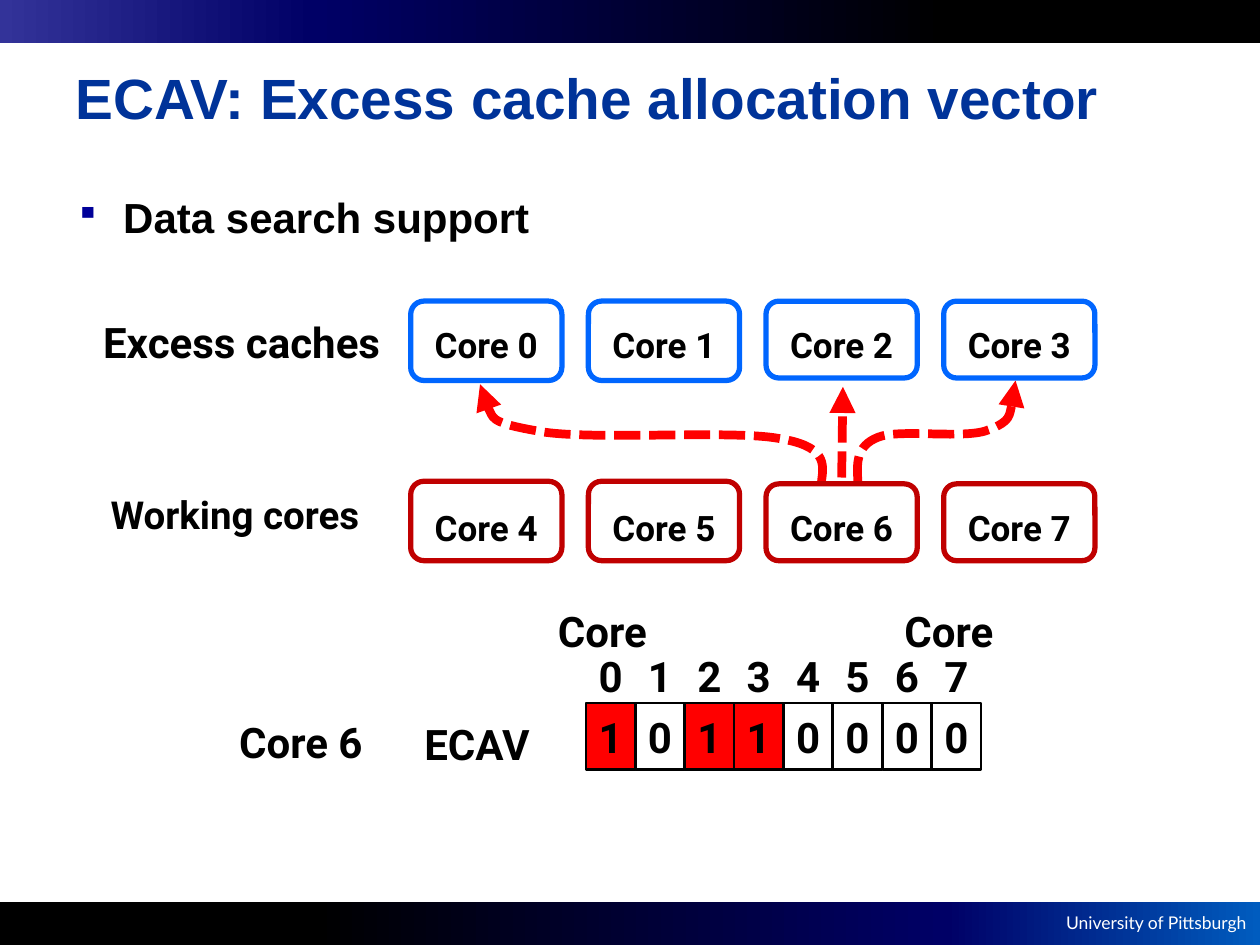
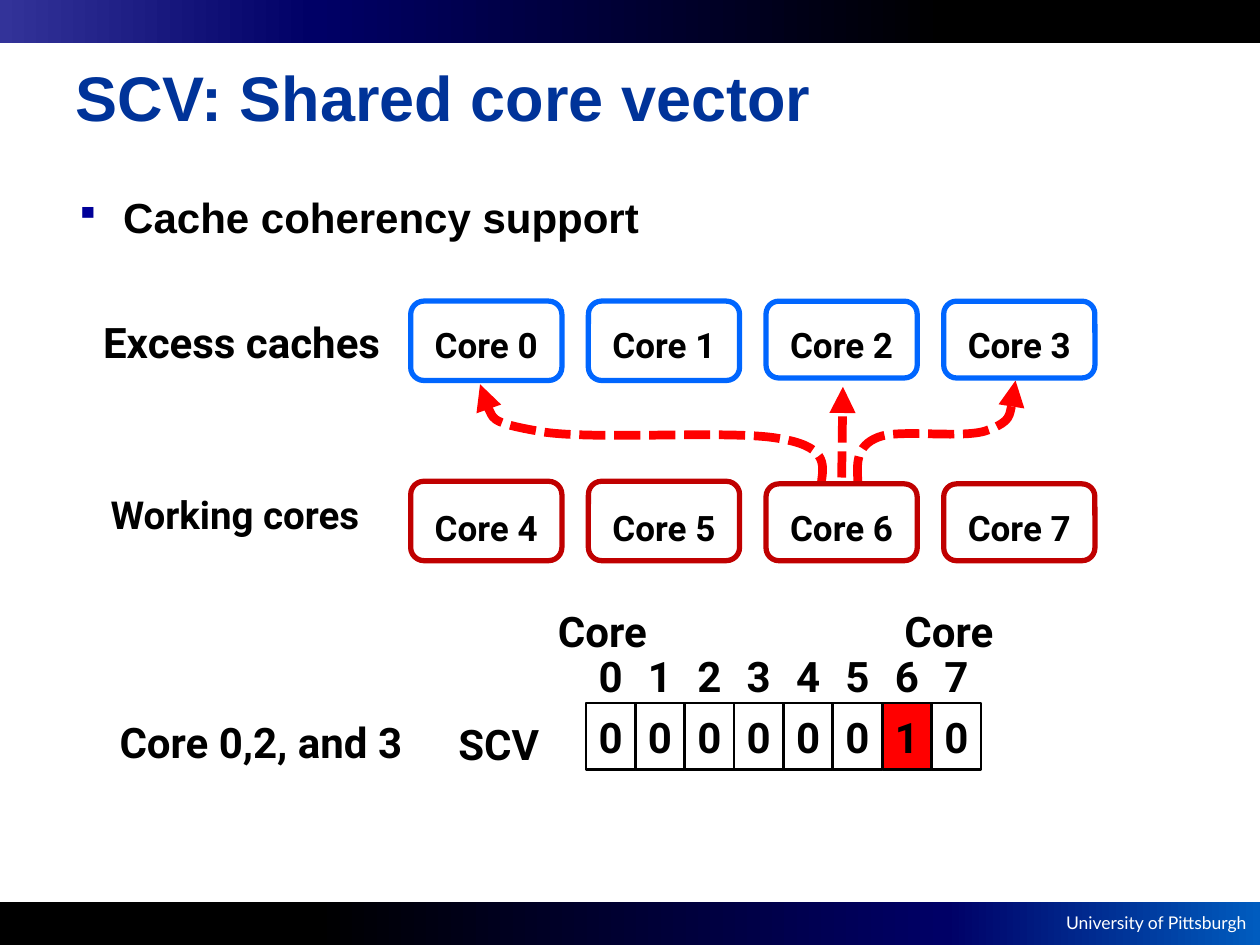
from dataclasses import dataclass

from lxml import etree
from pptx import Presentation
from pptx.dml.color import RGBColor
from pptx.enum.dml import MSO_LINE
from pptx.enum.shapes import MSO_CONNECTOR, MSO_SHAPE
from pptx.enum.text import MSO_ANCHOR, PP_ALIGN
from pptx.oxml.ns import qn
from pptx.util import Inches, Pt

RECT, ROUND = MSO_SHAPE.RECTANGLE, MSO_SHAPE.ROUNDED_RECTANGLE
STRAIGHT, DASH = MSO_CONNECTOR.STRAIGHT, MSO_LINE.SQUARE_DOT
LEFT, CENTER, RIGHT = PP_ALIGN.LEFT, PP_ALIGN.CENTER, PP_ALIGN.RIGHT
TOP, MIDDLE = MSO_ANCHOR.TOP, MSO_ANCHOR.MIDDLE

# The grid: 100 columns by 75 rows of square cells
CELL = Inches(0.1)
COLS, ROWS = 100, 75

BLACK, WHITE, RED = "000000", "FFFFFF", "FF0000"
BLUE, CRIMSON, NAVY, MARK = "0066FF", "C00000", "003399", "000099"
HEAD_FADE = ((0, "333399"), (25, "000066"), (75, BLACK), (100, BLACK))
FOOT_FADE = ((0, BLACK), (25, BLACK), (75, "000066"), (100, "005CBF"))
BAND = 3.4

# Core boxes: four columns in two rows
CORE_X, CORE_STEP, CORE_W = 32.6, 14.1, 12
CORE_H = (6.3, 6.3, 6.1, 6.1)

# Vector cells
BIT_X, BIT_W, BIT_H = 46.5, 3.92, 5.3
INDEX_Y, BIT_Y = 51, 55.8

# Curved arrows from core 6: a start, then three points for each bend
CURVES = (
    ((65.2, 38.2), (65.4, 36.8), (65.6, 35.4), (61.8, 34.8),
     (58, 34.1), (46.5, 35), (42.6, 34.2),
     (38.6, 33.5), (38.4, 32), (38.1, 30.5)),
    ((68.1, 38.3), (68, 36.8), (67.9, 35.4), (69.7, 34.7),
     (71.4, 34), (76.7, 34.9), (78.5, 34.1),
     (80.3, 33.4), (80.5, 31.8), (80.6, 30.2)),
)


@dataclass
class Box:
    x: float
    y: float
    w: float
    h: float

    def emu(self) -> list[int]:
        return [grid(v) for v in (self.x, self.y, self.w, self.h)]


@dataclass
class Style:
    size: float = 24
    font: str = "Roboto"
    color: str = BLACK
    bold: bool = True
    align: PP_ALIGN = LEFT
    anchor: MSO_ANCHOR = TOP


@dataclass
class Label:
    text: str
    box: Box
    size: float = 24


@dataclass
class Topic:
    title: str
    size: float
    point: str
    owner: Label
    name: Label
    bits: str


LABELS = (
    Label("Excess caches", Box(7.2, 24.6, 24.5, 5)),
    Label("Working cores", Box(7.8, 38.5, 24.8, 4.7), 22),
    Label("Core", Box(43.3, 47.6, 10.2, 5)),
    Label("Core", Box(70.8, 47.6, 10.2, 5)),
)
TOPICS = (
    Topic("ECAV: Excess cache allocation vector", 32.4, "Data search support",
          Label("Core 6", Box(18, 56.4, 13.3, 5)),
          Label("ECAV", Box(32.7, 56.5, 12.7, 5)), "10110000"),
    Topic("SCV: Shared core vector", 36, "Cache coherency support",
          Label("Core 0,2, and 3", Box(8.5, 56.4, 27.5, 5)),
          Label("SCV", Box(35.4, 56.5, 12.7, 5)), "00000010"),
)
BIT = Style(align=CENTER, anchor=MIDDLE)
CORE = Style(20, align=CENTER)
FOOT = Style(10, "Lato", WHITE, False, RIGHT)


def grid(cells: float) -> int:
    return round(cells * CELL)


def rgb(code: str) -> RGBColor:
    return RGBColor.from_string(code)


def write(shape, text: str, style: Style, wrap: bool = True):
    frame = shape.text_frame
    frame.word_wrap = wrap
    frame.vertical_anchor = style.anchor
    para = frame.paragraphs[0]
    para.text, para.alignment = text, style.align
    font = para.font
    font.size, font.name, font.bold = Pt(style.size), style.font, style.bold
    font.color.rgb = rgb(style.color)
    return frame


def add_text(slide, box: Box, text: str, style: Style, wrap: bool = True):
    return write(slide.shapes.add_textbox(*box.emu()), text, style, wrap)


def add_box(slide, kind: MSO_SHAPE, box: Box, fill: str = "",
            line: str = "", width: float = 0):
    shape = slide.shapes.add_shape(kind, *box.emu())
    shape.shadow.inherit = False
    if fill:
        shape.fill.solid()
        shape.fill.fore_color.rgb = rgb(fill)
    else:
        shape.fill.background()
    if line:
        shape.line.color.rgb = rgb(line)
        shape.line.width = Pt(width)
    else:
        shape.line.fill.background()
    return shape


def add_band(slide, y: float, stops: tuple) -> None:
    band = add_box(slide, RECT, Box(0, y, COLS, BAND))
    band.fill.gradient()
    band.fill.gradient_angle = 0
    fade = band._element.spPr.find(qn("a:gradFill")).find(qn("a:gsLst"))
    for stop in list(fade):
        fade.remove(stop)
    for pos, code in stops:
        stop = etree.SubElement(fade, qn("a:gs"), pos=str(pos * 1000))
        etree.SubElement(stop, qn("a:srgbClr"), val=code)


def add_point(slide, text: str) -> None:
    frame = add_text(slide, Box(5, 14.7, 90, 54), text, Style(font="Arial"))
    props = frame.paragraphs[0]._p.get_or_add_pPr()
    indent = grid(3.8)
    props.set("marL", str(indent))
    props.set("indent", str(-indent))
    tint = etree.Element(qn("a:buClr"))
    etree.SubElement(tint, qn("a:srgbClr"), val=MARK)
    size = etree.Element(qn("a:buSzPct"), val="80000")
    mark = etree.Element(qn("a:buChar"), char="▪")
    for place, part in enumerate((tint, size, mark)):
        props.insert(place, part)


def dash_arrow(line) -> None:
    line.color.rgb = rgb(RED)
    line.width = Pt(5)
    line.dash_style = DASH
    etree.SubElement(line._get_or_add_ln(), qn("a:tailEnd"), type="triangle")


def add_curve(slide, points: tuple) -> None:
    spots = [(grid(x), grid(y)) for x, y in points]
    pen = slide.shapes.build_freeform(*spots[0])
    pen.add_line_segments(spots[1:], close=False)
    curve = pen.convert_to_shape()
    curve.shadow.inherit = False
    curve.fill.background()
    # Turn each three straight steps into one bend
    steps = list(curve._element.iter(qn("a:lnTo")))
    for i in range(0, len(steps), 3):
        bend = etree.Element(qn("a:cubicBezTo"))
        steps[i].addprevious(bend)
        for step in steps[i:i + 3]:
            bend.append(step[0])
            step.getparent().remove(step)
    dash_arrow(curve.line)


def add_arrows(slide) -> None:
    for points in CURVES:
        add_curve(slide, points)
    ends = [grid(v) for v in (66.8, 37.9, 66.9, 30.7)]
    shaft = slide.shapes.add_connector(STRAIGHT, *ends)
    etree.SubElement(shaft._element.spPr, qn("a:effectLst"))
    dash_arrow(shaft.line)


def add_cores(slide) -> None:
    for i, high in enumerate(CORE_H):
        x = CORE_X + i * CORE_STEP
        # Tops align in the upper row, bottoms in the lower one
        rows = ((i, 23.9, 25.7, BLUE), (i + 4, 44.5 - high, 40.2, CRIMSON))
        for core, y, text_y, color in rows:
            box = add_box(slide, ROUND, Box(x, y, CORE_W, high), "", color, 3)
            frame = write(box, f"Core {core}", CORE)
            # The box's round corners add their own inset of about 0.3 cell
            frame.margin_top = grid(text_y - y - 0.3)
            frame.margin_bottom = 0


def add_vector(slide, bits: str) -> None:
    for i, bit in enumerate(bits):
        x = BIT_X + i * BIT_W
        fill = RED if bit == "1" else ""
        cell = add_box(slide, RECT, Box(x, BIT_Y, BIT_W, BIT_H), fill, BLACK, 1.5)
        index = add_text(slide, Box(x, INDEX_Y, BIT_W, BIT_H), str(i), BIT)
        for frame in (write(cell, bit, BIT), index):
            frame.margin_left = frame.margin_right = 0


def add_frame(slide, topic: Topic) -> None:
    add_band(slide, ROWS - BAND, FOOT_FADE)
    add_text(slide, Box(83.3, 71.9, 16.6, 2.7), "University of Pittsburgh",
             FOOT, wrap=False)
    add_band(slide, 0, HEAD_FADE)
    add_text(slide, Box(5, 1.4, 90, 12.5), topic.title,
             Style(topic.size, "Arial", NAVY, anchor=MIDDLE))
    add_point(slide, topic.point)


def main() -> None:
    deck = Presentation()
    deck.slide_width, deck.slide_height = grid(COLS), grid(ROWS)
    for topic in TOPICS:
        slide = deck.slides.add_slide(deck.slide_layouts[6])
        add_frame(slide, topic)
        add_arrows(slide)
        add_cores(slide)
        add_vector(slide, topic.bits)
        for label in (*LABELS, topic.owner, topic.name):
            add_text(slide, label.box, label.text, Style(label.size))
    deck.save("out.pptx")


if __name__ == "__main__":
    main()
